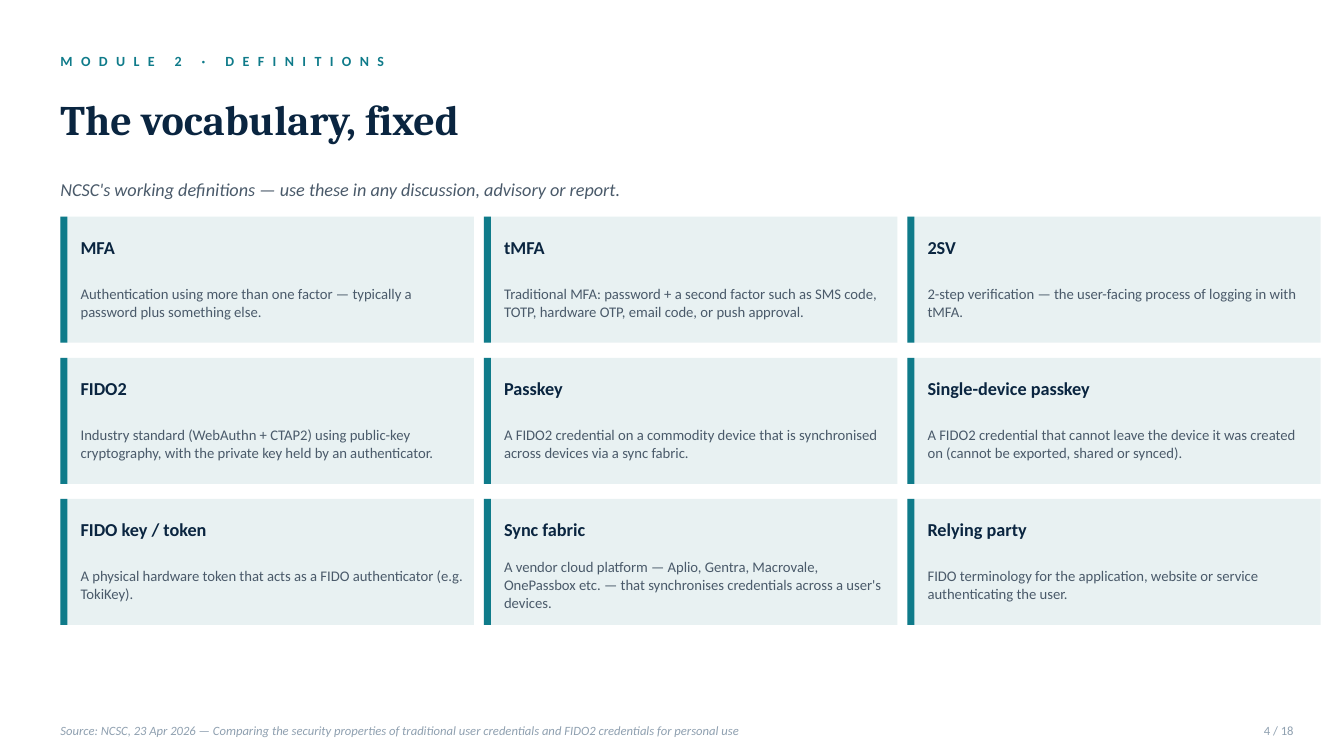
from pptx import Presentation
from pptx.dml.color import RGBColor
from pptx.enum.shapes import MSO_SHAPE
from pptx.enum.text import MSO_ANCHOR, PP_ALIGN
from pptx.util import Pt

MODULE = "MODULE 2 · DEFINITIONS"
TITLE = "The vocabulary, fixed"
SUBTITLE = "NCSC's working definitions — use these in any discussion, advisory or report."
DEFINITIONS = [
    ("MFA", "Authentication using more than one factor — typically a password plus something else."),
    ("tMFA", "Traditional MFA: password + a second factor such as SMS code, TOTP, hardware OTP, "
             "email code, or push approval."),
    ("2SV", "2-step verification — the user-facing process of logging in with tMFA."),
    ("FIDO2", "Industry standard (WebAuthn + CTAP2) using public-key cryptography, "
              "with the private key held by an authenticator."),
    ("Passkey", "A FIDO2 credential on a commodity device that is synchronised across devices "
                "via a sync fabric."),
    ("Single-device passkey", "A FIDO2 credential that cannot leave the device it was created on "
                              "(cannot be exported, shared or synced)."),
    ("FIDO key / token", "A physical hardware token that acts as a FIDO authenticator (e.g. TokiKey)."),
    ("Sync fabric", "A vendor cloud platform — Aplio, Gentra, Macrovale, OnePassbox etc. — "
                    "that synchronises credentials across a user's devices."),
    ("Relying party", "FIDO terminology for the application, website or service authenticating the user."),
]
SOURCE = ("Source: NCSC, 23 Apr 2026 — Comparing the security properties of traditional user "
          "credentials and FIDO2 credentials for personal use")
PAGE = "4 / 18"

NAVY = RGBColor(0x0A, 0x25, 0x40)
TEAL = RGBColor(0x0F, 0x7B, 0x8A)
SLATE = RGBColor(0x4A, 0x5A, 0x6A)
MIST = RGBColor(0xE8, 0xF1, 0xF2)
GREY = RGBColor(0x8F, 0xA0, 0xB0)

SLIDE_W, SLIDE_H = 959.76, 540
MARGIN = 43.2
COLUMNS = 3
CARD_W, CARD_H = 295.2, 90
GAP_X, GAP_Y = 7.2, 10.8
GRID_TOP = 154.8
BAR_W = 5.04
INDENT = 14.4
CARD_TEXT_W = 273.6
FOOTER_TOP, FOOTER_H = 511.2, 21.6
PAGE_W, PAGE_RIGHT = 43.2, 36


def add_text(s, text, x, y, w, h, size, color, font="Calibri",
             bold=False, italic=False, align=PP_ALIGN.LEFT):
    tf = s.shapes.add_textbox(Pt(x), Pt(y), Pt(w), Pt(h)).text_frame
    tf.word_wrap = True
    tf.vertical_anchor = MSO_ANCHOR.MIDDLE
    tf.margin_left = tf.margin_right = tf.margin_top = tf.margin_bottom = 0
    p = tf.paragraphs[0]
    p.text = text
    p.alignment = align
    p.font.name = font
    p.font.size = Pt(size)
    p.font.bold = bold
    p.font.italic = italic
    p.font.color.rgb = color
    return p


def add_rect(s, x, y, w, h, color):
    sp = s.shapes.add_shape(MSO_SHAPE.RECTANGLE, Pt(x), Pt(y), Pt(w), Pt(h))
    sp.shadow.inherit = False
    sp.fill.solid()
    sp.fill.fore_color.rgb = color
    sp.line.fill.background()


def add_card(s, term, meaning, x, y):
    add_rect(s, x, y, CARD_W, CARD_H, MIST)
    add_rect(s, x, y, BAR_W, CARD_H, TEAL)
    add_text(s, term, x + INDENT, y + 7.2, CARD_TEXT_W, 28.8, 13, NAVY, bold=True)
    add_text(s, meaning, x + INDENT, y + 32.4, CARD_TEXT_W, 57.6, 10.5, SLATE)


def main():
    prs = Presentation()
    prs.slide_width, prs.slide_height = Pt(SLIDE_W), Pt(SLIDE_H)
    s = prs.slides.add_slide(prs.slide_layouts[6])

    p = add_text(s, MODULE, MARGIN, 32.4, 864, 21.6, 10, TEAL, bold=True)
    p.runs[0].font._element.set("spc", "600")
    add_text(s, TITLE, MARGIN, 54, 871.2, 61.2, 30, NAVY, font="Cambria", bold=True)
    add_text(s, SUBTITLE, MARGIN, 122.4, 864, 25.2, 13, SLATE, italic=True)

    for i, (term, meaning) in enumerate(DEFINITIONS):
        row, col = divmod(i, COLUMNS)
        add_card(s, term, meaning,
                 MARGIN + col * (CARD_W + GAP_X), GRID_TOP + row * (CARD_H + GAP_Y))

    add_text(s, SOURCE, MARGIN, FOOTER_TOP, 756, FOOTER_H, 9, GREY, italic=True)
    add_text(s, PAGE, SLIDE_W - PAGE_RIGHT - PAGE_W, FOOTER_TOP, PAGE_W, FOOTER_H,
             9, GREY, align=PP_ALIGN.RIGHT)
    prs.save("out.pptx")


if __name__ == "__main__":
    main()
